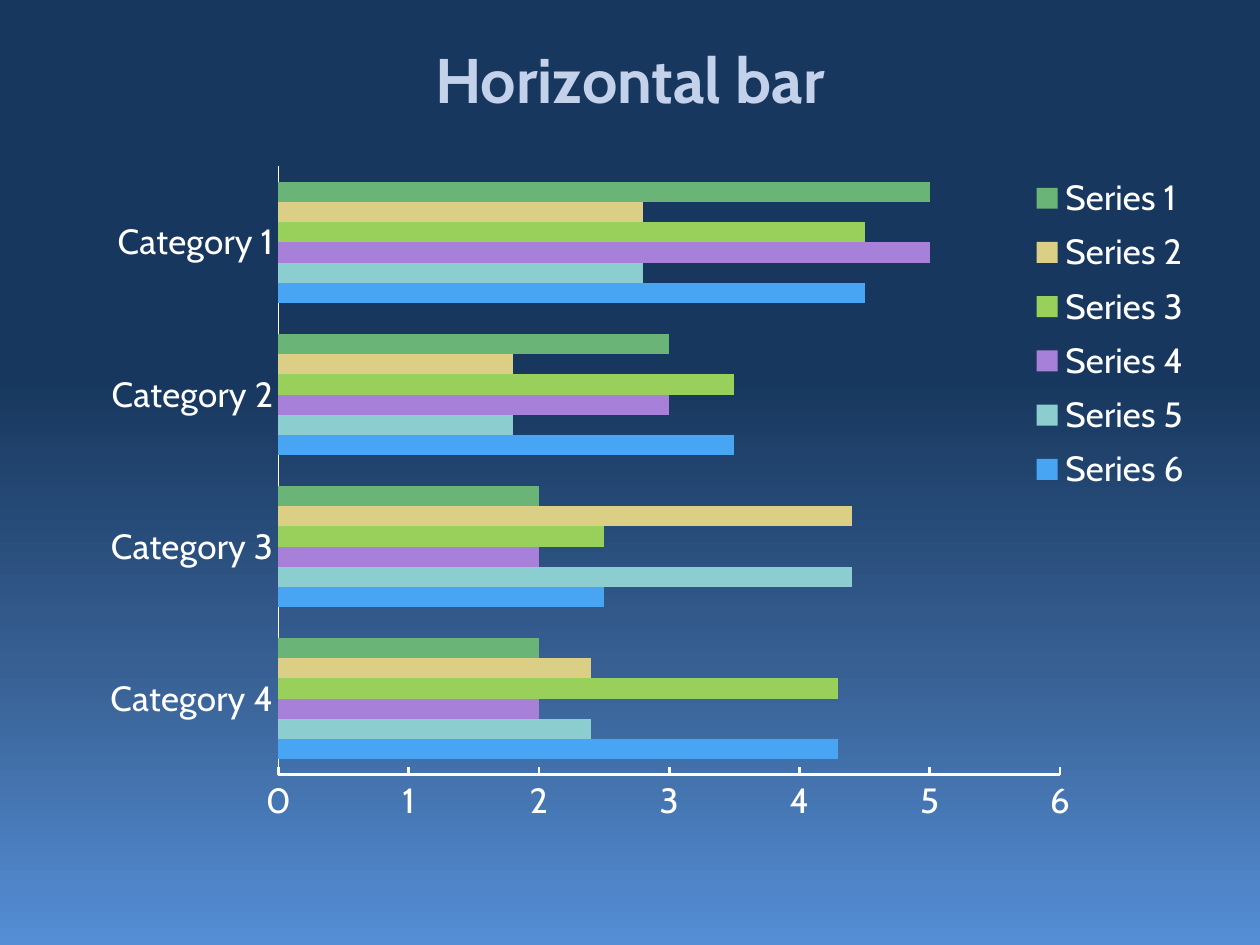
from copy import deepcopy
from dataclasses import dataclass

from lxml.etree import SubElement
from pptx import Presentation
from pptx.chart.data import CategoryChartData
from pptx.dml.color import RGBColor
from pptx.enum.chart import (
    XL_CHART_TYPE as ChartType,
    XL_LEGEND_POSITION as LegendPosition,
    XL_TICK_MARK as TickMark,
)
from pptx.enum.text import MSO_ANCHOR as Anchor, PP_ALIGN as Align
from pptx.oxml.ns import qn
from pptx.util import Inches, Pt


@dataclass(frozen=True)
class Theme:
    font: str = "Cabin"
    title_size: int = 36
    label_size: int = 20
    title: str = "C4D1EB"
    text: str = "FFFFFF"
    background: tuple = (
        (0, "17375E"), (0.4, "17375E"), (0.7, "375F92"), (1, "558ED5"),
    )
    series: tuple = ("47A5F3", "8CCDCF", "A780DA", "99D05C", "DBCF85", "6AB477")


THEME = Theme()
CATEGORIES = ["Category 4", "Category 3", "Category 2", "Category 1"]
VALUE_PATTERN = [(4.3, 2.5, 3.5, 4.5), (2.4, 4.4, 1.8, 2.8), (2, 2, 3, 5)]


def rgb(color):
    return RGBColor.from_string(color)


def style_font(font, size, color, bold=False):
    font.name = THEME.font
    font.size = Pt(size)
    font.bold = bold
    font.color.rgb = rgb(color)


def paint_background(slide):
    fill = slide.background.fill
    fill.gradient()
    fill.gradient_angle = 270
    stop_list = slide.element.find(".//" + qn("a:gsLst"))
    while len(stop_list) < len(THEME.background):
        stop_list.append(deepcopy(stop_list[0]))
    for stop, (position, color) in zip(fill.gradient_stops, THEME.background):
        stop.color.rgb = rgb(color)
        stop.position = position


def add_title(slide, text, left, top, width, height):
    frame = slide.shapes.add_textbox(left, top, width, height).text_frame
    frame.word_wrap = True
    frame.vertical_anchor = Anchor.MIDDLE
    paragraph = frame.paragraphs[0]
    paragraph.alignment = Align.CENTER
    run = paragraph.add_run()
    run.text = text
    style_font(run.font, THEME.title_size, THEME.title, bold=True)


def set_layout(element, index, box, inner=False):
    for old_layout in element.findall(qn("c:layout")):
        element.remove(old_layout)
    layout = SubElement(element, qn("c:layout"))
    element.insert(index, layout)
    manual = SubElement(layout, qn("c:manualLayout"))
    settings = [("layoutTarget", "inner")] if inner else []
    settings += [("xMode", "edge"), ("yMode", "edge"), *zip("xywh", box)]
    for name, value in settings:
        SubElement(manual, qn(f"c:{name}")).set("val", str(value))


def style_axis(axis, tick_mark, line_width):
    axis.has_major_gridlines = False
    axis.major_tick_mark = tick_mark
    axis.minor_tick_mark = TickMark.NONE
    axis.format.line.color.rgb = rgb(THEME.text)
    axis.format.line.width = Pt(line_width)
    style_font(axis.tick_labels.font, THEME.label_size, THEME.text)


def add_bar_chart(slide, left, top, width, height):
    data = CategoryChartData()
    data.categories = CATEGORIES
    count = len(THEME.series)
    for index in range(count):
        values = VALUE_PATTERN[index % len(VALUE_PATTERN)]
        data.add_series(f"Series {count - index}", values)
    chart = slide.shapes.add_chart(
        ChartType.BAR_CLUSTERED, left, top, width, height, data
    ).chart
    chart.has_title = False
    style_font(chart.font, THEME.label_size, THEME.text)

    plot = chart.plots[0]
    plot.gap_width = 150
    plot.vary_by_categories = False
    for series, color in zip(plot.series, THEME.series):
        series.format.fill.solid()
        series.format.fill.fore_color.rgb = rgb(color)

    style_axis(chart.category_axis, TickMark.NONE, 0.75)
    value_axis = chart.value_axis
    style_axis(value_axis, TickMark.INSIDE, 1.5)
    value_axis.minimum_scale = 0
    value_axis.maximum_scale = 6
    value_axis.major_unit = 1

    chart.has_legend = True
    legend = chart.legend
    legend.position = LegendPosition.CORNER
    legend.include_in_layout = False
    style_font(legend.font, THEME.label_size, THEME.text)

    chart_root = plot.series[0].format.fill and chart.element
    plot_area = chart_root.find(".//" + qn("c:plotArea"))
    set_layout(plot_area, 0, (0.18, 0.046, 0.653, 0.85), inner=True)
    legend_area = chart_root.find(".//" + qn("c:legend"))
    set_layout(legend_area, 1, (0.8, 0.045, 0.15, 0.47))


def main():
    presentation = Presentation()
    presentation.slide_width = Inches(10)
    presentation.slide_height = Inches(7.5)
    slide = presentation.slides.add_slide(presentation.slide_layouts[6])
    paint_background(slide)
    add_title(
        slide, "Horizontal bar", Inches(0.5), Inches(0), Inches(9), Inches(1.25)
    )
    add_bar_chart(slide, Inches(0.5), Inches(1.06), Inches(9.5), Inches(5.68))
    presentation.save("out.pptx")


if __name__ == "__main__":
    main()
